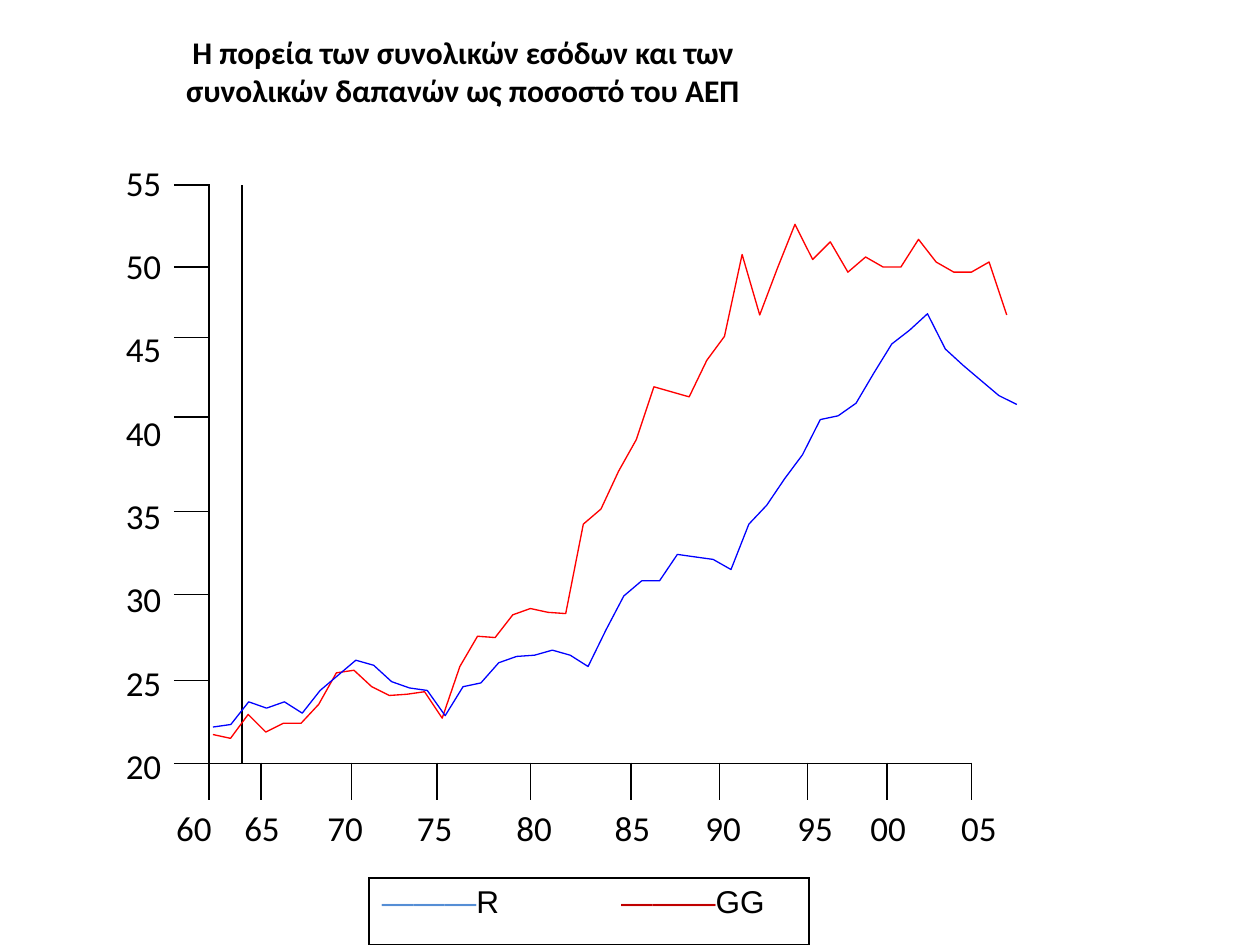
from dataclasses import dataclass
from typing import NamedTuple

from lxml.etree import SubElement
from pptx import Presentation
from pptx.dml.color import RGBColor
from pptx.enum.text import MSO_ANCHOR, MSO_AUTO_SIZE, PP_ALIGN
from pptx.oxml.ns import qn
from pptx.util import Emu, Pt

BLACK = RGBColor(0x00, 0x00, 0x00)
RED = RGBColor(0xFF, 0x00, 0x00)
BLUE = RGBColor(0x00, 0x00, 0xFF)
LEGEND_BLUE = RGBColor(0x55, 0x8E, 0xD5)
LEGEND_RED = RGBColor(0xC0, 0x00, 0x00)

# The slide is a grid of square units, 10 columns by 7.5 rows.
GRID_COLUMNS, GRID_ROWS = 10, 7.5
UNIT = 914400
NO_STYLE_NO_GRID = "{2D5ABB26-0587-4C30-8999-92F81FD0307C}"

TICK_COLUMNS = [0.28, 0.26, 0.15, 0.72, 0.68, 0.74, 0.8, 0.7, 0.7, 0.63, 0.67]
TICK_ROWS = [0.65, 0.56, 0.63, 0.75, 0.66, 0.68, 0.66, 0.29]
YEARS = ["60", "65", "70", "75", "80", "85", "90", "95", "00", "05"]
YEAR_STOPS = [0.4, 0.94, 1.6, 2.31, 3.1, 3.88, 4.6, 5.33, 5.91, 6.63]


class Box(NamedTuple):
    column: float
    row: float
    width: float
    height: float

    def emu(self) -> list[Emu]:
        return [units(value) for value in self]


@dataclass
class Series:
    color: RGBColor
    weight: float
    first_column: float
    last_column: float
    rows: list[float]


@dataclass
class LegendPart:
    text: str
    color: RGBColor


SPENDING = Series(RED, 0.77, 1.69, 7.99, [
    5.83, 5.86, 5.67, 5.81, 5.74, 5.74, 5.59, 5.34, 5.32, 5.45, 5.52, 5.51,
    5.49, 5.7, 5.29, 5.05, 5.06, 4.88, 4.83, 4.86, 4.87, 4.16, 4.04, 3.74,
    3.49, 3.07, 3.11, 3.15, 2.86, 2.67, 2.02, 2.5, 2.13, 1.78, 2.06, 1.92,
    2.16, 2.04, 2.12, 2.12, 1.9, 2.08, 2.16, 2.16, 2.08, 2.5])
REVENUE = Series(BLUE, 0.75, 1.69, 8.07, [
    5.77, 5.75, 5.57, 5.62, 5.57, 5.66, 5.48, 5.36, 5.24, 5.28, 5.41, 5.46,
    5.48, 5.68, 5.45, 5.42, 5.26, 5.21, 5.2, 5.16, 5.2, 5.29, 5, 4.73,
    4.61, 4.61, 4.4, 4.42, 4.44, 4.52, 4.16, 4.01, 3.8, 3.61, 3.33, 3.3,
    3.2, 2.96, 2.73, 2.62, 2.49, 2.77, 2.9, 3.02, 3.14, 3.21])
LEGEND = [LegendPart("———", LEGEND_BLUE), LegendPart("R\t", BLACK),
          LegendPart("———", LEGEND_RED), LegendPart("GG", BLACK)]


def units(value: float) -> Emu:
    return Emu(round(value * UNIT))


def add_run(paragraph, text: str, size: float, color=BLACK, face="Calibri", bold=False) -> None:
    run = paragraph.add_run()
    run.text = text
    run.font.size = Pt(size)
    run.font.name = face
    run.font.bold = bold
    run.font.color.rgb = color


def set_tab_stops(paragraph, stops: list[float]) -> None:
    tabs = SubElement(paragraph._p.get_or_add_pPr(), qn("a:tabLst"))
    for stop in stops:
        SubElement(tabs, qn("a:tab"), pos=str(units(stop)), algn="l")


def add_label_frame(slide, box: Box):
    frame = slide.shapes.add_textbox(*box.emu()).text_frame
    frame.word_wrap = True
    frame.auto_size = MSO_AUTO_SIZE.SHAPE_TO_FIT_TEXT
    return frame


def add_plain_table(slide, column: float, row: float, widths: list[float], heights: list[float]):
    box = Box(column, row, sum(widths), sum(heights))
    table = slide.shapes.add_table(len(heights), len(widths), *box.emu()).table
    table._tbl.tblPr.find(qn("a:tableStyleId")).text = NO_STYLE_NO_GRID
    table.first_row = table.horz_banding = False
    for table_column, width in zip(table.columns, widths):
        table_column.width = units(width)
    for table_row, height in zip(table.rows, heights):
        table_row.height = units(height)
    return table


def format_cell(cell, sides: str) -> None:
    """Rule the given sides (letters out of LRTB) and leave the cell unfilled."""
    properties = cell._tc.get_or_add_tcPr()
    for side in "LRTB":
        if side in sides:
            line = SubElement(properties, qn(f"a:ln{side}"), w=str(Pt(1)))
            fill = SubElement(line, qn("a:solidFill"))
            SubElement(fill, qn("a:srgbClr"), val=str(BLACK))
    cell.fill.background()


def tick_sides(row: int, column: int, last_row: int) -> str:
    if row == last_row:
        return "TR" if column == 0 else "LTR"
    if column == 0:
        return "TRB"
    sides = "L" if column == 1 else ""
    return sides + ("B" if row == last_row - 1 else "")


def add_axes(slide) -> None:
    table = add_plain_table(slide, 1.38, 1.47, TICK_COLUMNS, TICK_ROWS)
    last_row, last_column = len(TICK_ROWS) - 1, len(TICK_COLUMNS) - 1
    for row in range(last_row + 1):
        for column in range(last_column + 1):
            cell = table.cell(row, column)
            cell.margin_top = cell.margin_bottom = 0
            SubElement(cell.text_frame.paragraphs[0]._p, qn("a:endParaRPr"), sz="800")
            format_cell(cell, tick_sides(row, column, last_row))
    table.cell(0, 1).merge(table.cell(last_row - 1, 1))
    for row in range(last_row):
        table.cell(row, 2).merge(table.cell(row, last_column))
    table.cell(last_row, 1).merge(table.cell(last_row, 2))


def add_percent_labels(slide) -> None:
    frame = add_label_frame(slide, Box(0.9, 1.23, 0.63, 5.15))
    for index, percent in enumerate(range(55, 15, -5)):
        paragraph = frame.add_paragraph() if index else frame.paragraphs[0]
        paragraph.space_before = Pt(23.6 if index else 0)
        add_run(paragraph, str(percent), 20)


def add_year_labels(slide) -> None:
    paragraph = add_label_frame(slide, Box(0.9, 6.35, 7.32, 0.44)).paragraphs[0]
    set_tab_stops(paragraph, YEAR_STOPS)
    for year in YEARS:
        add_run(paragraph, f"\t{year}", 20)


def add_series(slide, series: Series) -> None:
    step = (series.last_column - series.first_column) / (len(series.rows) - 1)
    points = [(units(series.first_column + index * step), units(row))
              for index, row in enumerate(series.rows)]
    builder = slide.shapes.build_freeform(*points[0])
    builder.add_line_segments(points[1:], close=False)
    curve = builder.convert_to_shape()
    curve.shadow.inherit = False
    curve.fill.background()
    curve.line.color.rgb = series.color
    curve.line.width = Pt(series.weight)


def set_title(slide) -> None:
    title = slide.shapes.title
    title.left, title.top, title.width, title.height = Box(0.35, 0.21, 6.65, 0.71).emu()
    frame = title.text_frame
    frame.word_wrap = True
    frame.auto_size = MSO_AUTO_SIZE.SHAPE_TO_FIT_TEXT
    frame.vertical_anchor = MSO_ANCHOR.TOP
    paragraph = frame.paragraphs[0]
    paragraph.alignment = PP_ALIGN.CENTER
    add_run(paragraph, "Η πορεία των συνολικών εσόδων και των", 18, bold=True)
    paragraph.add_line_break()
    add_run(paragraph, "συνολικών δαπανών ως ποσοστό του ΑΕΠ", 18, bold=True)


def add_legend(slide) -> None:
    cell = add_plain_table(slide, 2.93, 6.97, [3.49], [0.53]).cell(0, 0)
    format_cell(cell, "LRTB")
    paragraph = cell.text_frame.paragraphs[0]
    set_tab_stops(paragraph, [1.9])
    for part in LEGEND:
        add_run(paragraph, part.text, 18, part.color, "Arial")


def main() -> None:
    deck = Presentation()
    deck.slide_width, deck.slide_height = units(GRID_COLUMNS), units(GRID_ROWS)
    slide = deck.slides.add_slide(deck.slide_layouts.get_by_name("Title Only"))
    add_axes(slide)
    add_percent_labels(slide)
    add_year_labels(slide)
    for series in (SPENDING, REVENUE):
        add_series(slide, series)
    set_title(slide)
    add_legend(slide)
    deck.save("out.pptx")


if __name__ == "__main__":
    main()
